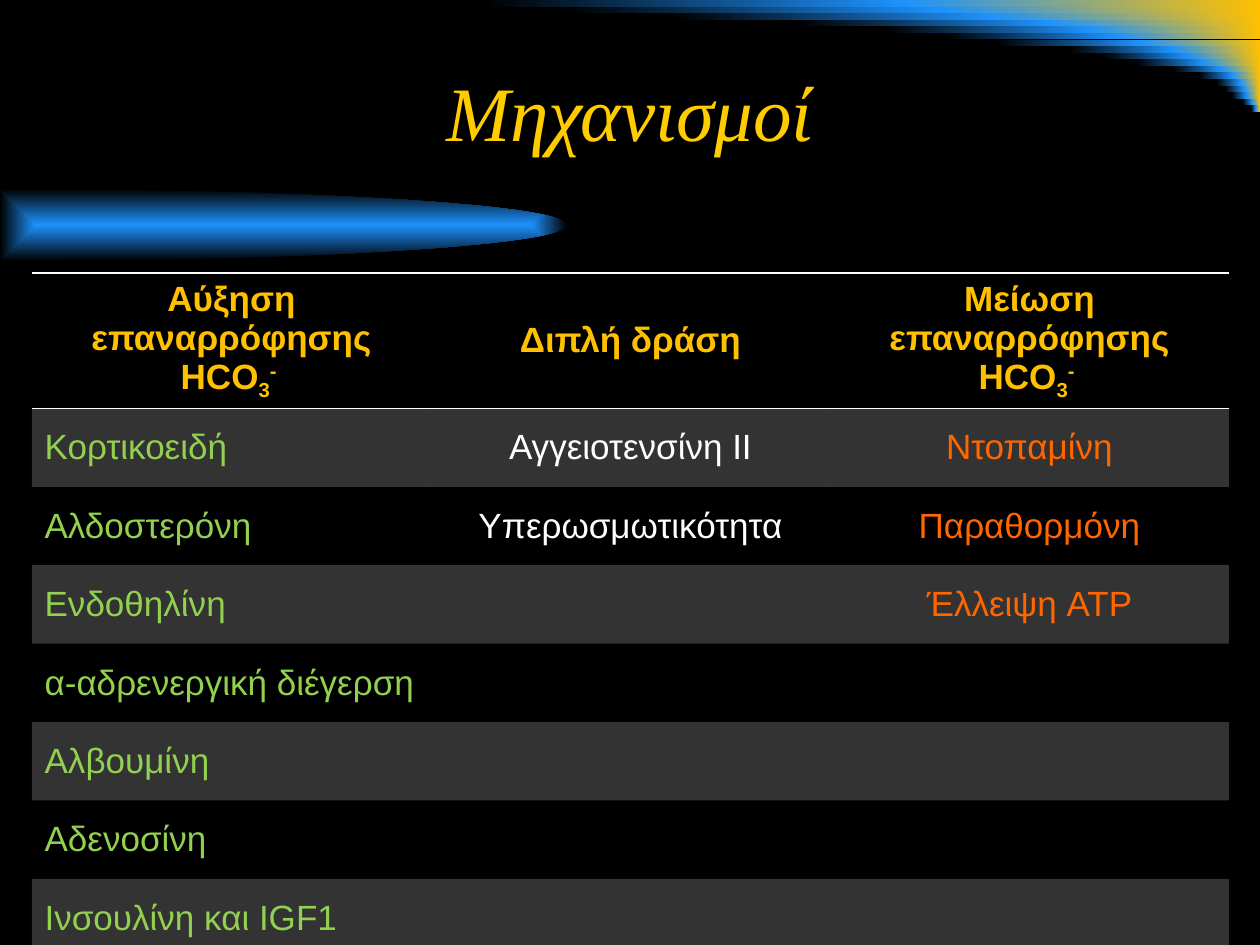
import math

from lxml import etree
from pptx import Presentation
from pptx.dml.color import RGBColor
from pptx.enum.shapes import MSO_SHAPE
from pptx.enum.text import MSO_ANCHOR, PP_ALIGN
from pptx.oxml import parse_xml
from pptx.oxml.ns import nsdecls, qn
from pptx.util import Pt

RECT = MSO_SHAPE.RECTANGLE
MIDDLE = MSO_ANCHOR.MIDDLE
LEFT, CENTER = PP_ALIGN.LEFT, PP_ALIGN.CENTER

SCALE = 914400 / 126
W, H = 1260, 945
BLACK, BLUE, GOLD, WHITE = "000000", "1D92FD", "FFC000", "FFFFFF"
GREEN, ORANGE, TITLE_GOLD = "92D050", "FF6600", "FFCC00"
NO_STYLE = "{2D5ABB26-0587-4C30-8999-92F81FD0307C}"

# Widths of the gold part of each stripe in the corner, from the top
STRIPES = [358, 318, 270, 213, 173, 145, 121, 88, 72, 57, 40, 28, 20, 16, 13, 8, 4]
STRIPES_HEIGHT = 112
DARK_RATIO = 7 / 6

BICARBONATE = [("3", -25), ("- ", 30)]
HEADER = [
    [("Αύξηση επαναρρόφησης HCO", 0)] + BICARBONATE,
    [("Διπλή δράση", 0)],
    [("Μείωση επαναρρόφησης HCO", 0)] + BICARBONATE,
]
ROWS = [
    ["Κορτικοειδή", "Αγγειοτενσίνη ΙΙ", "Ντοπαμίνη"],
    ["Αλδοστερόνη", "Υπερωσμωτικότητα", "Παραθορμόνη"],
    ["Ενδοθηλίνη", "", "Έλλειψη ATP"],
    ["α-αδρενεργική διέγερση", "", ""],
    ["Αλβουμίνη", "", ""],
    ["Αδενοσίνη", "", ""],
    ["Ινσουλίνη και IGF1", "", ""],
]
COLUMNS = [(GREEN, LEFT), (WHITE, CENTER), (ORANGE, CENTER)]


def px(n):
    return round(n * SCALE)


def rgb(value):
    return RGBColor.from_string(value)


def set_font(r, name, size, color, bold=False, italic=False):
    r.font.name, r.font.size = name, Pt(size)
    r.font.bold, r.font.italic = bold, italic
    r.font.color.rgb = rgb(color)


def set_gradient(sp, start, end):
    sp.shadow.inherit = False
    sp.line.fill.background()
    sp.fill.gradient()
    sp.fill.gradient_angle = 0
    for stop, color, position in zip(sp.fill.gradient_stops, (start, end), (0, 1)):
        stop.color.rgb = rgb(color)
        stop.position = position


def add_stripe(shapes, x, y, w, h, start, end):
    sp = shapes.add_shape(RECT, px(x), px(y), px(w), px(h))
    set_gradient(sp, start, end)


def add_corner(shapes):
    h = STRIPES_HEIGHT / len(STRIPES)
    for i, gold in enumerate(STRIPES):
        dark = gold * DARK_RATIO
        add_stripe(shapes, W - gold, i * h, gold, h, BLUE, GOLD)
        add_stripe(shapes, W - gold - dark, i * h, dark, h, BLACK, BLUE)


def add_half_ellipse(shapes, cy, rx, ry, steps=60):
    angles = [math.pi * (i / steps - 0.5) for i in range(steps + 1)]
    points = [(px(rx * math.cos(a)), px(cy + ry * math.sin(a))) for a in angles]
    builder = shapes.build_freeform(*points[0])
    builder.add_line_segments(points[1:], close=True)
    sp = builder.convert_to_shape()
    set_gradient(sp, BLUE, BLACK)
    # The gradient runs from the centre to the outline
    lin = sp._element.spPr.find(".//" + qn("a:lin"))
    lin.getparent().replace(lin, parse_xml(
        f'<a:path {nsdecls("a")} path="shape">'
        '<a:fillToRect l="50000" t="50000" r="50000" b="50000"/></a:path>'))


def set_title(slide, text):
    sp = slide.shapes.title
    sp.left, sp.top, sp.width, sp.height = px(42), px(32), px(1176), px(157)
    tf = sp.text_frame
    tf.text = text
    tf.vertical_anchor = MIDDLE
    p = tf.paragraphs[0]
    p.alignment = CENTER
    set_font(p.runs[0], "Times New Roman", 44, TITLE_GOLD, italic=True)
    slide.shapes._spTree.append(sp._element)  # bring to front


def set_borders(cell, sides):
    tcPr = cell._tc.get_or_add_tcPr()
    for i, side in enumerate(sides):
        tcPr.insert(i, parse_xml(
            f'<a:ln{side} {nsdecls("a")} w="12700"><a:solidFill>'
            f'<a:srgbClr val="{WHITE}"/></a:solidFill></a:ln{side}>'))


def set_cell(cell, runs, color, align, bold=False, shaded=False, borders=""):
    cell.vertical_anchor = MIDDLE
    p = cell.text_frame.paragraphs[0]
    p.alignment = align
    for text, baseline in runs:
        r = p.add_run()
        r.text = text
        set_font(r, "Arial", 20, color, bold)
        if baseline:
            r._r.get_or_add_rPr().set("baseline", str(baseline * 1000))
    if shaded:
        cell.fill.solid()
        cell.fill.fore_color.rgb = rgb(WHITE)
        clr = cell._tc.tcPr.find(".//" + qn("a:srgbClr"))
        etree.SubElement(clr, qn("a:alpha")).set("val", "20000")
    else:
        cell.fill.background()
    set_borders(cell, borders)


def add_mechanisms_table(shapes):
    width, height, header_height = 1197, 652, 103
    frame = shapes.add_table(len(ROWS) + 1, len(COLUMNS),
                             px(32), px(273), px(width), px(height))
    table = frame.table
    table.first_row = table.horz_banding = False
    table._tbl.tblPr.find(qn("a:tableStyleId")).text = NO_STYLE

    for col in table.columns:
        col.width = px(width / len(COLUMNS))
    for row in table.rows:
        row.height = px((height - header_height) / len(ROWS))
    table.rows[0].height = px(header_height)

    for c, runs in enumerate(HEADER):
        set_cell(table.cell(0, c), runs, GOLD, CENTER, bold=True, borders="TB")
    for i, texts in enumerate(ROWS, start=1):
        for c, (text, (color, align)) in enumerate(zip(texts, COLUMNS)):
            runs = [(text, 0)] if text else []
            set_cell(table.cell(i, c), runs, color, align, shaded=i % 2 == 1,
                     borders="B" if i == len(ROWS) else "")


def main():
    prs = Presentation()
    prs.slide_width, prs.slide_height = px(W), px(H)
    slide = prs.slides.add_slide(prs.slide_layouts[5])
    slide.background.fill.solid()
    slide.background.fill.fore_color.rgb = rgb(BLACK)

    # Decoration
    add_corner(slide.shapes)
    add_half_ellipse(slide.shapes, cy=225, rx=567, ry=36)

    # Content
    set_title(slide, "Μηχανισμοί")
    add_mechanisms_table(slide.shapes)

    prs.save("out.pptx")


if __name__ == "__main__":
    main()
